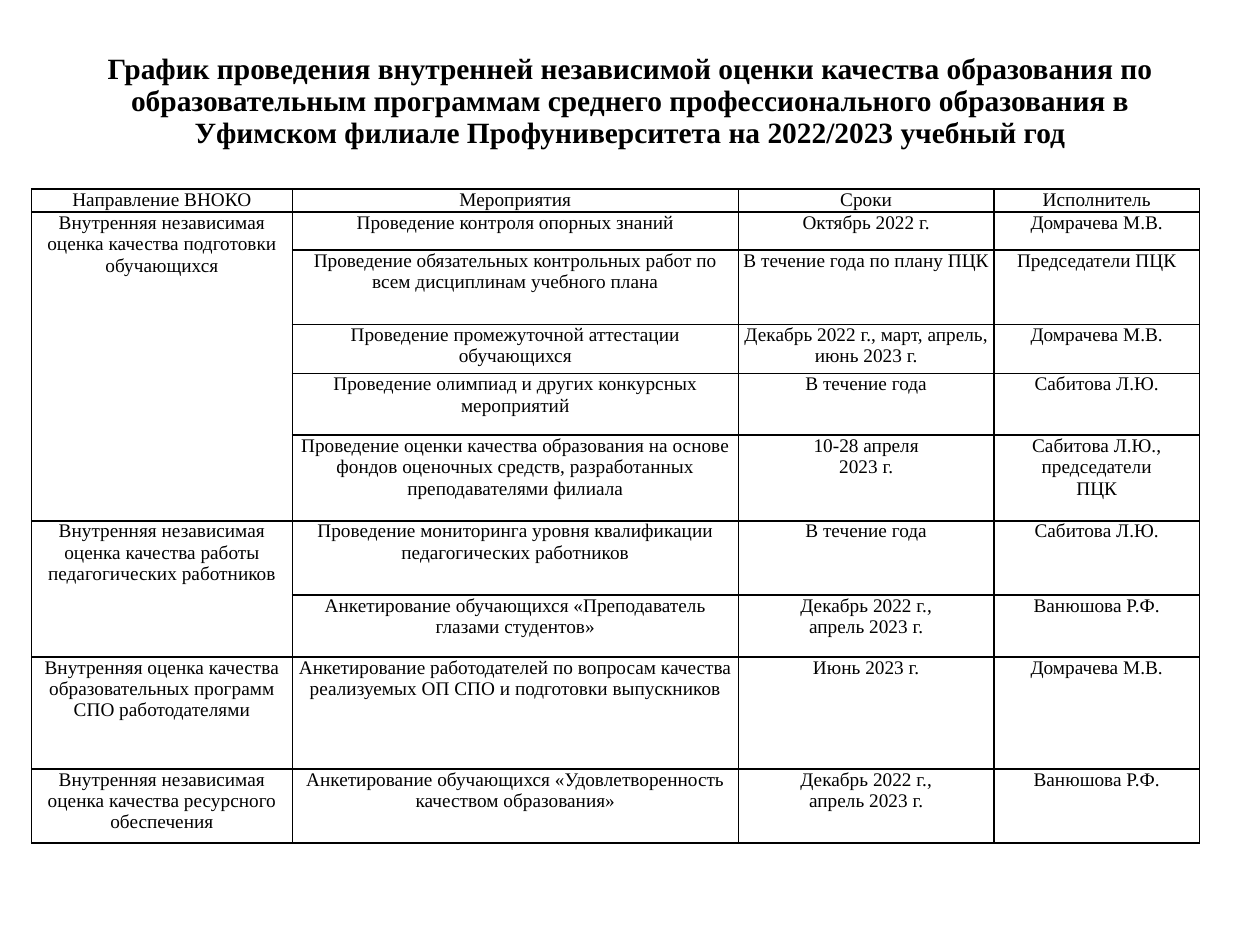
from dataclasses import dataclass

from lxml.etree import SubElement
from pptx import Presentation
from pptx.dml.color import RGBColor
from pptx.enum.text import MSO_ANCHOR, PP_ALIGN
from pptx.oxml.ns import qn
from pptx.table import Table, _Cell
from pptx.text.text import TextFrame
from pptx.util import Inches, Pt

BLACK = RGBColor(0, 0, 0)
FONT = "Times New Roman"
TITLE = (
    "График проведения внутренней независимой оценки качества образования по "
    "образовательным программам среднего профессионального образования в "
    "Уфимском филиале Профуниверситета на 2022/2023 учебный год"
)
HEADERS = ("Направление ВНОКО", "Мероприятия", "Сроки", "Исполнитель")
COL_WIDTHS = (2.07, 3.54, 2.03, 1.63)
HEADER_HEIGHT = 0.17


@dataclass(frozen=True)
class Activity:
    height: float
    name: str
    dates: str
    person: str


@dataclass(frozen=True)
class Direction:
    name: str
    activities: tuple[Activity, ...]


DIRECTIONS = (
    Direction("Внутренняя независимая оценка качества подготовки обучающихся", (
        Activity(0.3, "Проведение контроля опорных знаний",
                 "Октябрь 2022 г.", "Домрачева М.В."),
        Activity(0.59, "Проведение обязательных контрольных работ по всем дисциплинам учебного плана",
                 "В течение года по плану ПЦК", "Председатели ПЦК"),
        Activity(0.39, "Проведение промежуточной аттестации обучающихся",
                 "Декабрь 2022 г., март, апрель, июнь 2023 г.", "Домрачева М.В."),
        Activity(0.49, "Проведение олимпиад и других конкурсных мероприятий",
                 "В течение года", "Сабитова Л.Ю."),
        Activity(0.68, "Проведение оценки качества образования на основе фондов оценочных "
                 "средств, разработанных преподавателями филиала",
                 "10-28 апреля\n2023 г.", "Сабитова Л.Ю., председатели\nПЦК"),
    )),
    Direction("Внутренняя независимая оценка качества работы педагогических работников", (
        Activity(0.59, "Проведение мониторинга уровня квалификации педагогических работников",
                 "В течение года", "Сабитова Л.Ю."),
        Activity(0.49, "Анкетирование обучающихся «Преподаватель глазами студентов»",
                 "Декабрь 2022 г.,\nапрель 2023 г.", "Ванюшова Р.Ф."),
    )),
    Direction("Внутренняя оценка качества образовательных программ СПО работодателями", (
        Activity(0.89, "Анкетирование работодателей по вопросам качества реализуемых ОП СПО "
                 "и подготовки выпускников", "Июнь 2023 г.", "Домрачева М.В."),
    )),
    Direction("Внутренняя независимая оценка качества ресурсного обеспечения", (
        Activity(0.59, "Анкетирование обучающихся «Удовлетворенность качеством образования»",
                 "Декабрь 2022 г.,\nапрель 2023 г.", "Ванюшова Р.Ф."),
    )),
)


def write(tf: TextFrame, text: str, size: float, bold: bool = False,
          spacing: float = 1.0) -> None:
    for i, line in enumerate(text.split("\n")):
        p = tf.add_paragraph() if i else tf.paragraphs[0]
        p.alignment = PP_ALIGN.CENTER
        p.line_spacing = spacing
        r = p.add_run()
        r.text = line
        r.font.name = FONT
        r.font.size = Pt(size)
        r.font.bold = bold
        r.font.color.rgb = BLACK


def style_cell(cell: _Cell) -> None:
    cell.margin_left = cell.margin_right = Inches(0.03)
    cell.margin_top = cell.margin_bottom = Inches(0)
    tc_pr = cell._tc.get_or_add_tcPr()
    for side in ("a:lnL", "a:lnR", "a:lnT", "a:lnB"):
        ln = SubElement(tc_pr, qn(side), w=str(Pt(1)))
        fill = SubElement(ln, qn("a:solidFill"))
        SubElement(fill, qn("a:srgbClr"), val=str(BLACK))
    cell.fill.background()


def fill_row(table: Table, row: int, texts: tuple[str, ...], first_col: int = 0) -> None:
    for col, text in enumerate(texts, first_col):
        write(table.cell(row, col).text_frame, text, 11)


def add_title(s) -> None:
    sp = s.shapes.add_textbox(Inches(0.69), Inches(0.4), Inches(8.62), Inches(1.45))
    tf = sp.text_frame
    tf.word_wrap = True
    tf.vertical_anchor = MSO_ANCHOR.TOP
    tf.margin_top = Inches(0.03)
    write(tf, TITLE, 16.8, bold=True, spacing=0.9)


def add_schedule(s) -> None:
    heights = [HEADER_HEIGHT] + [a.height for d in DIRECTIONS for a in d.activities]
    table = s.shapes.add_table(
        len(heights), len(COL_WIDTHS), Inches(0.25), Inches(1.5),
        Inches(sum(COL_WIDTHS)), Inches(sum(heights)),
    ).table
    table.first_row = table.horz_banding = False
    for column, width in zip(table.columns, COL_WIDTHS):
        column.width = Inches(width)
    for row, height in zip(table.rows, heights):
        row.height = Inches(height)
    for cell in table.iter_cells():
        style_cell(cell)

    fill_row(table, 0, HEADERS)
    row = 1
    for direction in DIRECTIONS:
        last = row + len(direction.activities) - 1
        if last > row:
            table.cell(row, 0).merge(table.cell(last, 0))
        fill_row(table, row, (direction.name,))
        for a in direction.activities:
            fill_row(table, row, (a.name, a.dates, a.person), first_col=1)
            row += 1


def main() -> None:
    prs = Presentation()
    prs.slide_width, prs.slide_height = Inches(10), Inches(7.5)
    s = prs.slides.add_slide(prs.slide_layouts[6])
    add_title(s)
    add_schedule(s)
    prs.save("out.pptx")


if __name__ == "__main__":
    main()
